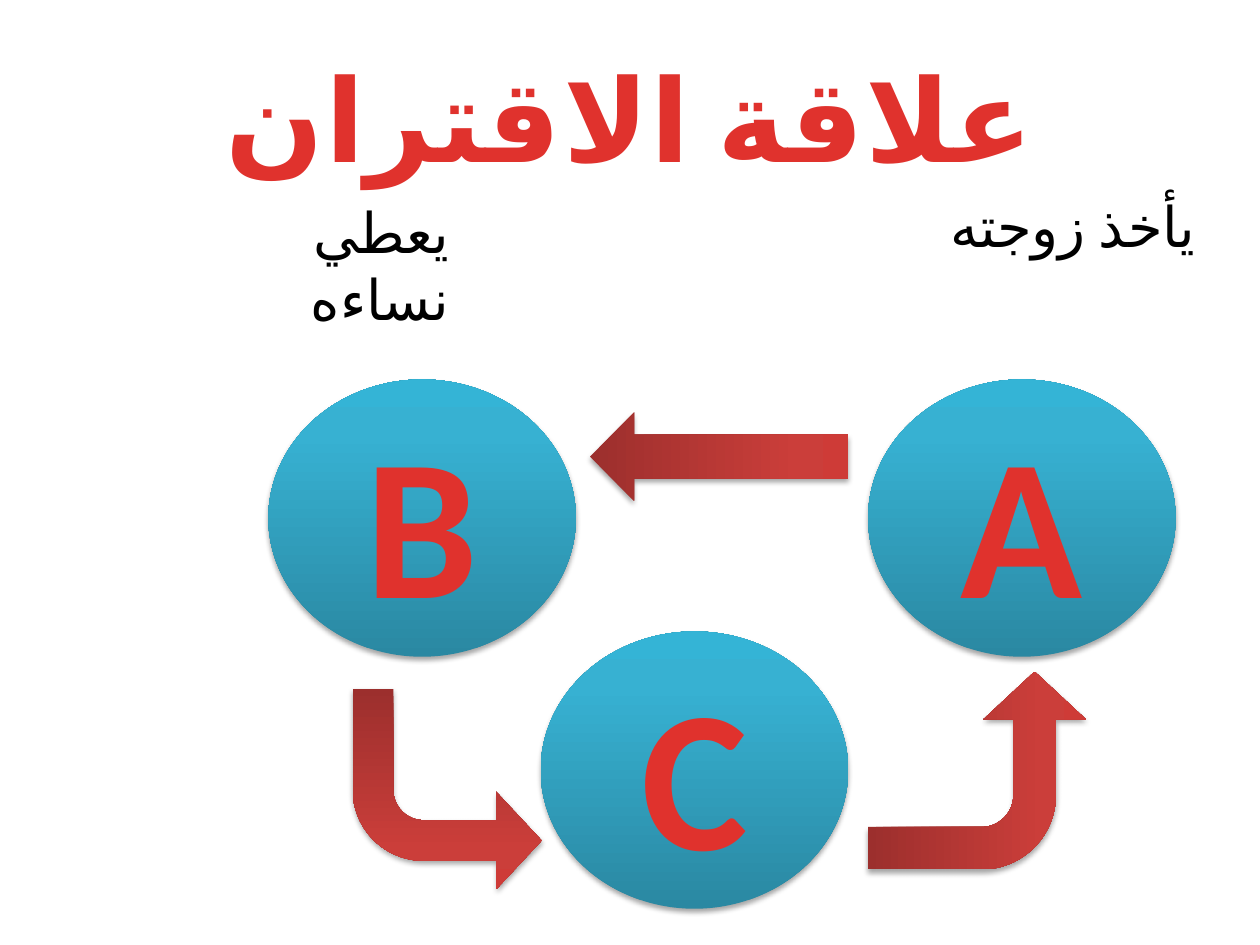
from dataclasses import dataclass
from typing import Optional

from lxml.etree import SubElement
from pptx import Presentation
from pptx.dml.color import RGBColor
from pptx.enum.lang import MSO_LANGUAGE_ID as Language
from pptx.enum.shapes import MSO_SHAPE as Shape
from pptx.enum.text import MSO_ANCHOR as Anchor, PP_ALIGN as Align
from pptx.oxml.ns import qn
from pptx.util import Cm, Pt

FONT = "Calibri"
COLORS = {
    "text": "000000",
    "shadow": "000000",
    "red": "E0322D",
    "red_dark": "A2201C",
    "circle_dark": "2A88A2",
    "circle_mid": "37B1D2",
    "circle_light": "34B4D6",
    "arrow_dark": "9C2F2D",
    "arrow_mid": "CB3E3A",
    "arrow_light": "CE3B37",
}
LETTER_STOPS = [(25, "red"), (100, "red_dark")]
CIRCLE_STOPS = [(0, "circle_dark"), (80, "circle_mid"), (100, "circle_light")]
ARROW_STOPS = [(0, "arrow_dark"), (80, "arrow_mid"), (100, "arrow_light")]
BEND = (0.215, 0.259, 0.241, 0.376)
CIRCLE_WIDTH, CIRCLE_HEIGHT = 6.2, 5.59


@dataclass
class Group:
    letter: str
    left: float
    top: float


@dataclass
class Arrow:
    kind: Shape
    left: float
    top: float
    width: float
    height: float
    rotation: int
    flip: Optional[str] = None
    adjustments: tuple = ()


@dataclass
class Label:
    text: str
    left: float
    top: float
    width: float
    wrap: bool = False
    margin_right: float = 0.25


GROUPS = [Group("A", 17.5, 7.65), Group("B", 5.41, 7.65), Group("C", 10.9, 12.73)]
ARROWS = [
    Arrow(Shape.BENT_ARROW, 17.7, 13.34, 3.99, 4.39, 270, "flipV", BEND),
    Arrow(Shape.DOWN_ARROW, 13.61, 6.6, 1.78, 5.21, 90),
    Arrow(Shape.BENT_ARROW, 7.11, 13.89, 3.81, 4.04, 180, "flipH", BEND),
]
LABELS = [
    Label("يأخذ زوجته ", 18.36, 3.73, 5.99),
    Label("يعطي نساءه", 5.74, 3.86, 5.77, True, 2.46),
]


def apply_gradient(fill, parent, stops: list, angle: int) -> None:
    fill.gradient()
    gradient = parent.find(qn("a:gradFill"))
    stop_list = gradient.find(qn("a:gsLst"))
    for old_stop in list(stop_list):
        stop_list.remove(old_stop)
    for position, color in stops:
        stop = SubElement(stop_list, qn("a:gs"), pos=str(position * 1000))
        SubElement(stop, qn("a:srgbClr"), val=COLORS[color])
    gradient.find(qn("a:lin")).set("ang", str(angle * 60000))


def add_shadow(shape) -> None:
    shape.shadow.inherit = False
    effects = shape._element.spPr.find(qn("a:effectLst"))
    shadow = SubElement(effects, qn("a:outerShdw"), blurRad=str(Pt(3.1)),
                        dist=str(Pt(1.8)), dir=str(90 * 60000), rotWithShape="0")
    color = SubElement(shadow, qn("a:srgbClr"), val=COLORS["shadow"])
    SubElement(color, qn("a:alpha"), val="35000")


def write_text(text_frame, text: str, size: float, alignment: Align):
    text_frame.text = text
    paragraph = text_frame.paragraphs[0]
    paragraph.alignment = alignment
    paragraph._p.get_or_add_pPr().set("rtl", "1")
    run = paragraph.runs[0]
    run.font.name = FONT
    run.font.size = Pt(size)
    run.font.language_id = Language.ARABIC_ALGERIA
    # Arabic letters take the complex-script font
    SubElement(run._r.get_or_add_rPr(), qn("a:cs"), typeface=FONT)
    return run


def write_red_text(text_frame, text: str, size: float) -> None:
    text_frame.vertical_anchor = Anchor.MIDDLE
    text_frame.word_wrap = True
    run = write_text(text_frame, text, size, Align.CENTER)
    run.font.bold = True
    properties = run._r.get_or_add_rPr()
    properties.set("spc", "50")
    apply_gradient(run.font.fill, properties, LETTER_STOPS, 90)


def add_filled_shape(slide, kind: Shape, box: tuple, stops: list):
    shape = slide.shapes.add_shape(kind, *(Cm(length) for length in box))
    apply_gradient(shape.fill, shape._element.spPr, stops, 270)
    shape.line.fill.background()
    add_shadow(shape)
    return shape


def add_group(slide, group: Group) -> None:
    box = (group.left, group.top, CIRCLE_WIDTH, CIRCLE_HEIGHT)
    shape = add_filled_shape(slide, Shape.OVAL, box, CIRCLE_STOPS)
    write_red_text(shape.text_frame, group.letter, 115)


def add_arrow(slide, arrow: Arrow) -> None:
    box = (arrow.left, arrow.top, arrow.width, arrow.height)
    shape = add_filled_shape(slide, arrow.kind, box, ARROW_STOPS)
    shape.rotation = arrow.rotation
    if arrow.flip:
        shape._element.spPr.find(qn("a:xfrm")).set(arrow.flip, "1")
    for index, value in enumerate(arrow.adjustments):
        shape.adjustments[index] = value


def add_label(slide, label: Label) -> None:
    shape = slide.shapes.add_textbox(Cm(label.left), Cm(label.top), Cm(label.width), Cm(1.62))
    text_frame = shape.text_frame
    text_frame.word_wrap = label.wrap
    text_frame.margin_right = Cm(label.margin_right)
    run = write_text(text_frame, label.text, 32, Align.RIGHT)
    run.font.color.rgb = RGBColor.from_string(COLORS["text"])


def main() -> None:
    presentation = Presentation()
    presentation.slide_width, presentation.slide_height = Cm(25.4), Cm(19.05)
    slide = presentation.slides.add_slide(presentation.slide_layouts[5])

    # Title
    title = slide.shapes.title
    title.left, title.top, title.width, title.height = Cm(1.27), Cm(0.76), Cm(22.86), Cm(3.18)
    write_red_text(title.text_frame, "علاقة الاقتران", 66)

    # Captions, circles and the arrows joining them
    for label in LABELS:
        add_label(slide, label)
    for group in GROUPS:
        add_group(slide, group)
    for arrow in ARROWS:
        add_arrow(slide, arrow)

    presentation.save("out.pptx")


if __name__ == "__main__":
    main()
